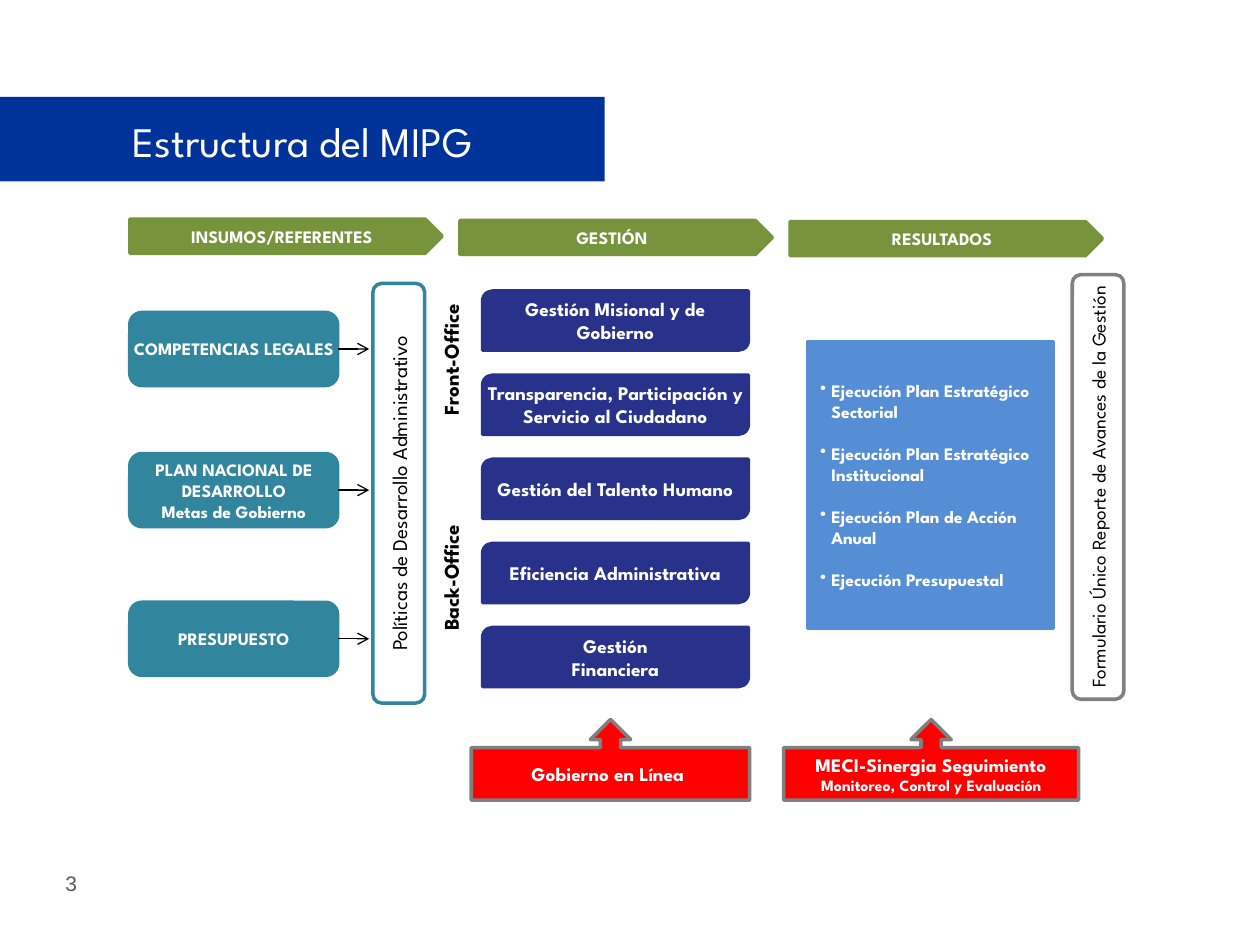
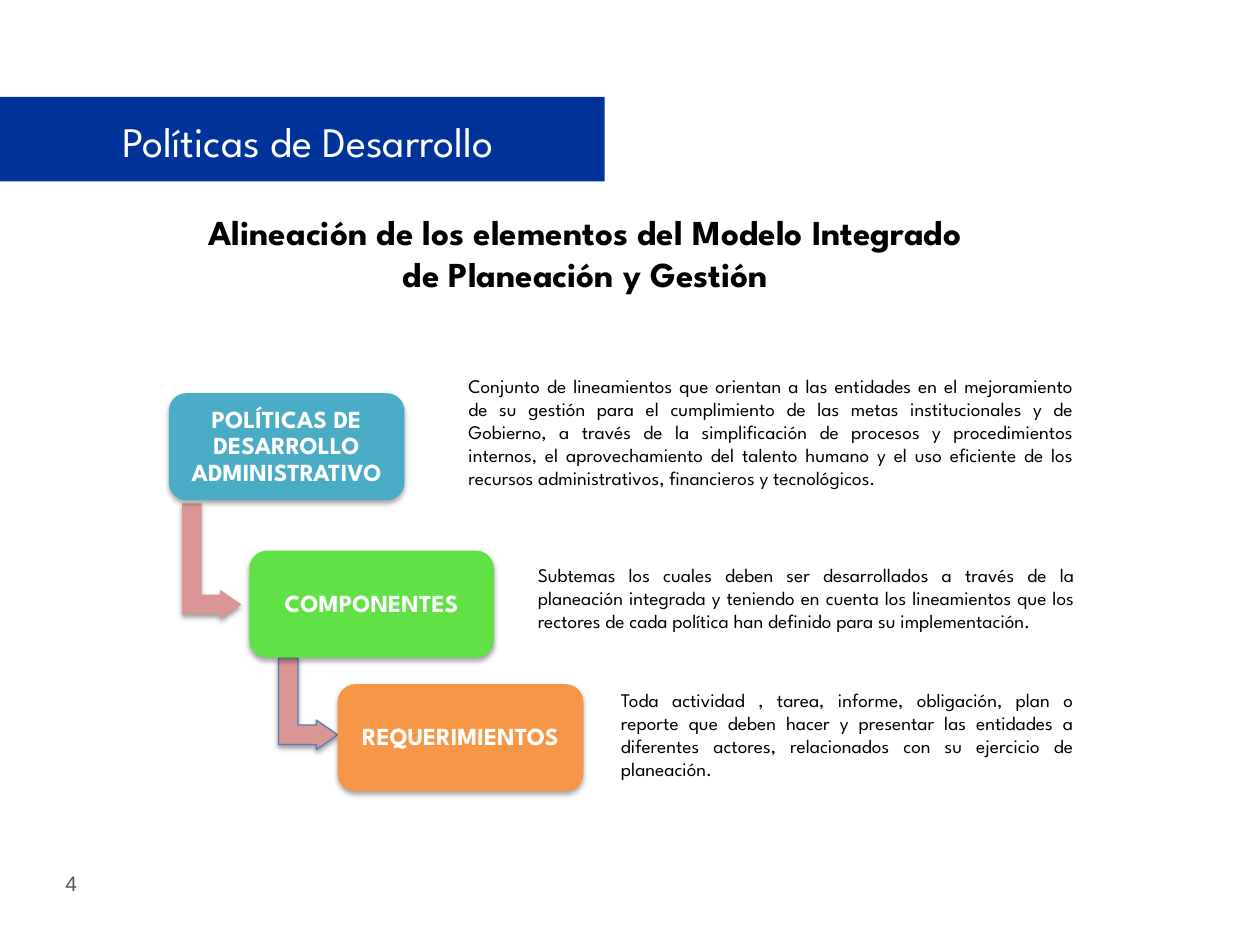
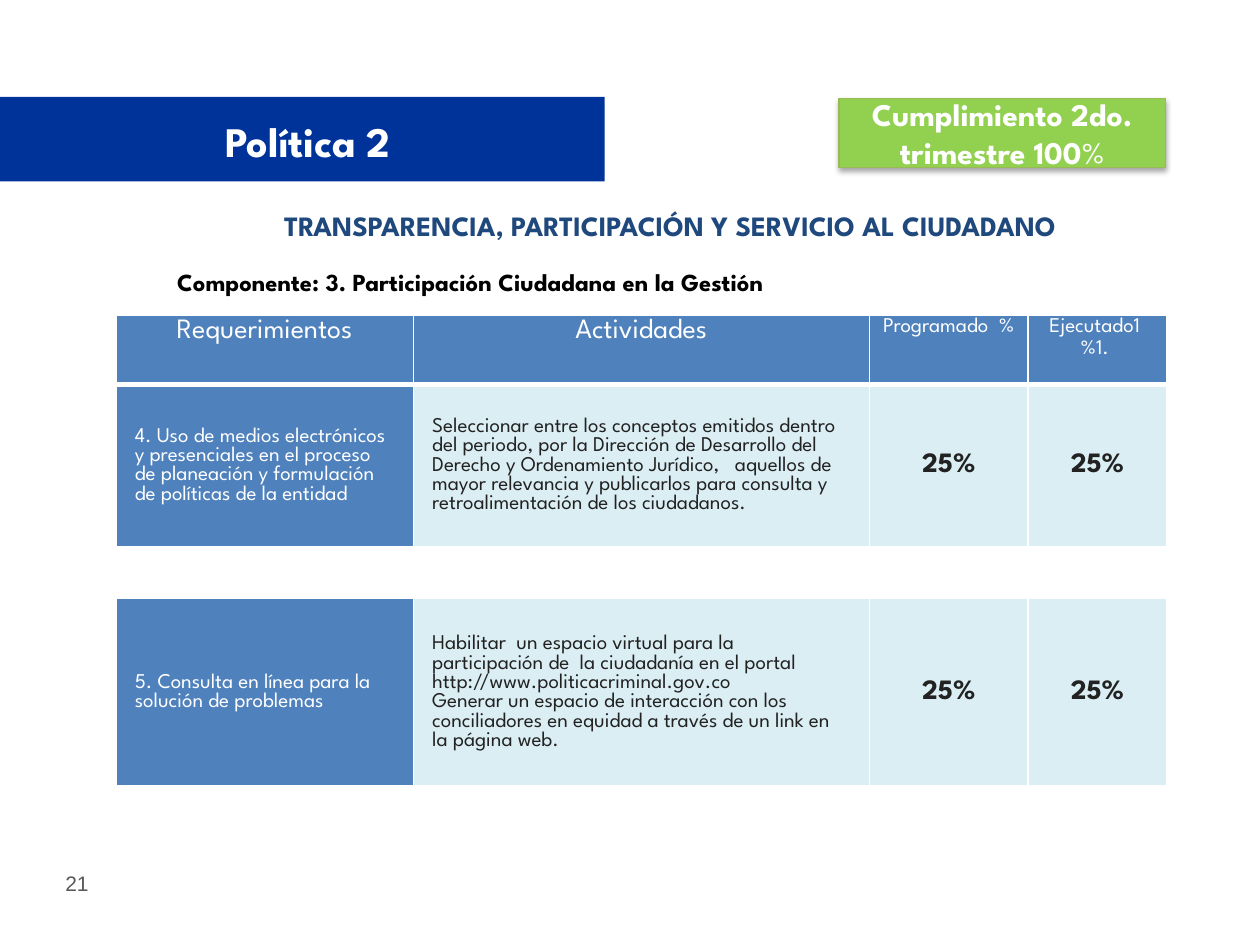
from lxml import etree
from pptx import Presentation
from pptx.dml.color import RGBColor
from pptx.enum.shapes import MSO_CONNECTOR, MSO_SHAPE
from pptx.enum.text import MSO_ANCHOR, PP_ALIGN
from pptx.oxml.ns import qn
from pptx.util import Inches, Pt

LEFT, MID, JUST = PP_ALIGN.LEFT, PP_ALIGN.CENTER, PP_ALIGN.JUSTIFY
TOP, CENTER = MSO_ANCHOR.TOP, MSO_ANCHOR.MIDDLE
RECT, ROUND = MSO_SHAPE.RECTANGLE, MSO_SHAPE.ROUNDED_RECTANGLE
PLATE, DIAG = MSO_SHAPE.PENTAGON, MSO_SHAPE.ROUND_2_DIAG_RECTANGLE
CALL, BENT = MSO_SHAPE.UP_ARROW_CALLOUT, MSO_SHAPE.BENT_UP_ARROW
STRAIGHT = MSO_CONNECTOR.STRAIGHT

FONT = "League Spartan"
WHITE, BLACK, INK, GRAY = "FFFFFF", "000000", "222222", "808080"
BAND, TEAL, NAVY, GREEN = "003399", "31859C", "28328A", "77933C"
RED, SKY, BLUE, PALE = "FF0000", "558ED5", "4F81BD", "DBEEF4"
COLS = [2.36, 3.62, 1.26, 1.1]


def color(code):
    return RGBColor.from_string(code)


def node(parent, tag, **attrs):
    item = etree.SubElement(parent, qn(tag))
    for key, value in attrs.items():
        item.set(key, str(value))
    return item


def paint(parent, code):
    return node(node(parent, "a:solidFill"), "a:srgbClr", val=code)


class Deck:
    def __init__(self):
        self.prs = Presentation()
        self.prs.slide_width, self.prs.slide_height = Inches(10), Inches(7.5)
        self.slide = None

    def page(self, title, number, bold=False):
        """Start a slide with its number, title band and title."""
        self.slide = self.prs.slides.add_slide(self.prs.slide_layouts[6])
        self.text(0.42, 6.86, 0.75, 0.3, number, 12, "595959", font="Arial")
        self.shape(RECT, 0, 0.77, 4.8, 0.67, BAND)
        self.text(0.34, 0.87, 4.21, 0.48, title, 24, WHITE, bold, MID)

    def typeset(self, frame, text, size, ink=BLACK, bold=False, align=LEFT,
                anchor=TOP, inset=None, space=None, gap=None, bullet=False,
                turn=False, font=FONT):
        frame.word_wrap = True
        frame.vertical_anchor = anchor
        if inset is not None:
            frame.margin_left = frame.margin_right = Inches(inset)
            frame.margin_top = frame.margin_bottom = Inches(inset)
        if turn:
            frame._txBody.bodyPr.set("vert", "vert270")
        for i, line in enumerate(text.split("\n")):
            para = frame.add_paragraph() if i else frame.paragraphs[0]
            para.add_run().text = line
            para.alignment = align
            if space:
                para.line_spacing = space
            if gap and i:
                para.space_before = Pt(gap)
            if bullet:
                props = para._p.get_or_add_pPr()
                props.set("marL", str(Inches(0.09)))
                props.set("indent", str(Inches(-0.09)))
                node(props, "a:buChar", char="•")
            para.font.name, para.font.size = font, Pt(size)
            para.font.bold = bold
            para.font.color.rgb = color(ink)

    def text(self, x, y, w, h, text, size, ink=BLACK, bold=False,
             align=LEFT, **style):
        box = self.slide.shapes.add_textbox(
            Inches(x), Inches(y), Inches(w), Inches(h))
        self.typeset(box.text_frame, text, size, ink, bold, align, **style)
        return box

    def shape(self, kind, x, y, w, h, fill=None, line=None, width=2):
        item = self.slide.shapes.add_shape(
            kind, Inches(x), Inches(y), Inches(w), Inches(h))
        item.shadow.inherit = False
        if fill:
            item.fill.solid()
            item.fill.fore_color.rgb = color(fill)
        else:
            item.fill.background()
        if line:
            item.line.color.rgb = color(line)
            item.line.width = Pt(width)
        else:
            item.line.fill.background()
        return item

    def label(self, item, text, size, ink=WHITE, bold=True, align=MID, **style):
        self.typeset(item.text_frame, text, size, ink, bold, align, CENTER,
                     **style)

    def shade(self, item, alpha, dist):
        """Cast a soft shadow straight down."""
        effects = item._element.spPr.find(qn("a:effectLst"))
        shadow = node(effects, "a:outerShdw", blurRad=Pt(3.1), dist=Pt(dist),
                      dir=5400000, rotWithShape=0)
        tone = node(shadow, "a:srgbClr", val=BLACK)
        node(tone, "a:alpha", val=alpha * 1000)

    def arrow(self, source, x, y):
        """Run an arrow from the right side of a shape."""
        link = self.slide.shapes.add_connector(
            STRAIGHT, Inches(x), Inches(y), Inches(x), Inches(y))
        link.begin_connect(source, 3)
        link.end_x, link.end_y = Inches(x), link.begin_y
        link.line.color.rgb = color(BLACK)
        link.line.width = Pt(0.75)
        node(link.line._get_or_add_ln(), "a:tailEnd", type="arrow")
        node(link._element.spPr, "a:effectLst")

    def elbow(self, x, y, w, h, line=None):
        item = self.shape(BENT, x, y, w, h, "D99694", line, 0.75)
        item.rotation = 90
        for i, value in enumerate((0.33, 0.25, 0.36)):
            item.adjustments[i] = value
        self.shade(item, 38, 1.6)

    def table(self, x, y, heights):
        grid = self.slide.shapes.add_table(
            len(heights), len(COLS), Inches(x), Inches(y),
            Inches(sum(COLS)), Inches(sum(heights))).table
        grid.first_row = grid.horz_banding = False
        for col, width in zip(grid.columns, COLS):
            col.width = Inches(width)
        for row, height in zip(grid.rows, heights):
            row.height = Inches(height)
        return grid

    def cell(self, grid, r, c, text, size, fill, ink, **style):
        cell = grid.cell(r, c)
        props = cell._tc.get_or_add_tcPr()
        for side, width in (("L", 1), ("R", 1), ("T", 3 if r else 1), ("B", 3)):
            paint(node(props, "a:ln" + side, w=Pt(width)), WHITE)
        cell.fill.solid()
        cell.fill.fore_color.rgb = color(fill)
        self.typeset(cell.text_frame, text, size, ink, **style)
        return cell

    def pad(self, cell, side, edge):
        cell.margin_left = cell.margin_right = Inches(side)
        cell.margin_top = cell.margin_bottom = Inches(edge)

    def heads(self, grid, names):
        for c, name in enumerate(names):
            cell = self.cell(grid, 0, c, name, 16 if c < 2 else 12, BLUE, WHITE,
                             align=MID, space=1.15)
            self.pad(cell, 0.07, 0)

    def goal(self, grid, r, need, task, plan, done):
        """Fill one body row: requirement, activity and two shares."""
        for c, (words, fill, ink) in enumerate(
                ((need, BLUE, WHITE), (task, PALE, INK))):
            cell = self.cell(grid, r, c, words, 12, fill, ink)
            self.pad(cell, 0.15, 0.15)
            cell.vertical_anchor = CENTER
        for c, share in enumerate((plan, done), 2):
            cell = self.cell(grid, r, c, share, 16, PALE, INK, bold=True,
                             align=MID)
            self.pad(cell, 0, 0)
            cell.vertical_anchor = CENTER


def model(deck):
    deck.page("Estructura del MIPG ", "3")

    # Stage headings
    for i, name in enumerate(("INSUMOS/REFERENTES", "GESTIÓN", "RESULTADOS")):
        plate = deck.shape(PLATE, 1.03 + 2.62 * i, 1.74 + 0.01 * i, 2.48, 0.27,
                           GREEN, GREEN)
        deck.label(plate, name, 10)

    # Inputs and their arrows
    inputs = ((2.48, "COMPETENCIAS LEGALES"),
              (3.6, "PLAN NACIONAL DE DESARROLLO\nMetas de Gobierno"),
              (4.78, "PRESUPUESTO"))
    for y, name in inputs:
        box = deck.shape(ROUND, 1.03, y, 1.65, 0.58, TEAL, TEAL)
        deck.label(box, name, 10, inset=0)
        deck.arrow(box, 2.93, y + 0.29)

    # Upright labels
    uprights = (
        (2.96, 2.25, 3.33, TEAL, "Políticas de Desarrollo Administrativo", 12),
        (3.37, 2.25, 1.21, None, "Front-Office", 12),
        (3.37, 3.98, 1.21, None, "Back-Office", 12),
        (8.51, 2.18, 3.37, GRAY,
         "Formulario Único Reporte de Avances de la Gestión", 11))
    for x, y, h, line, name, size in uprights:
        box = deck.shape(ROUND, x, y, 0.41, h, line=line)
        deck.label(box, name, size, BLACK, line is None, inset=0.04, turn=True)

    # Management policies
    areas = ("Gestión Misional y de Gobierno",
             "Transparencia, Participación y Servicio al Ciudadano",
             "Gestión del Talento Humano", "Eficiencia Administrativa",
             "Gestión\nFinanciera")
    for i, name in enumerate(areas):
        box = deck.shape(DIAG, 3.83, 2.31 + 2.67 * i / 4, 2.11, 0.47, NAVY, NAVY)
        deck.label(box, name, 11, inset=0)

    # Results
    box = deck.shape(RECT, 6.41, 2.71, 1.95, 2.28, SKY, SKY)
    deck.label(box, "Ejecución Plan Estratégico Sectorial\n"
               "Ejecución Plan Estratégico Institucional\n"
               "Ejecución Plan de Acción Anual\n"
               "Ejecución Presupuestal", 10, align=LEFT, gap=12, bullet=True)

    # Supporting callouts
    calls = ((3.74, 2.21, "Gobierno en Línea "),
             (6.22, 2.34, "MECI-Sinergia Seguimiento\n"
                          "Monitoreo, Control y Evaluación"))
    for x, w, name in calls:
        box = deck.shape(CALL, x, 5.71, w, 0.64, RED, GRAY)
        deck.label(box, name, 11, inset=0)
        for para in box.text_frame.paragraphs[1:]:
            para.font.size = Pt(9)


def levels(deck):
    deck.page("Políticas de Desarrollo", "4")
    deck.text(1.42, 1.62, 6.45, 0.77, "Alineación de los elementos del Modelo "
              "Integrado de Planeación y Gestión", 20, bold=True, align=MID)

    # Elbow arrows
    deck.elbow(1.22, 4.22, 0.92, 0.47)
    deck.elbow(2.08, 5.35, 0.73, 0.47, BLUE)

    # Steps
    steps = ((1.34, 3.12, 1.87, "4BACC6", "POLÍTICAS DE DESARROLLO ADMINISTRATIVO"),
             (1.98, 4.37, 1.94, "60E146", "COMPONENTES"),
             (2.68, 5.43, 1.95, "F79646", "REQUERIMIENTOS"))
    for x, y, w, fill, name in steps:
        card = deck.shape(ROUND, x, y, w, 0.85, fill)
        deck.shade(card, 35, 1.8)
        deck.label(card, name, 14, inset=0.06, space=0.9)

    # Definitions
    notes = (
        (3.62, 2.92, 5, 1.21,
         "Conjunto de lineamientos que orientan a las entidades en el "
         "mejoramiento de su gestión para el cumplimiento de las metas "
         "institucionales y de Gobierno, a través de la simplificación de "
         "procesos y procedimientos internos, el aprovechamiento del talento "
         "humano y el uso eficiente de los recursos administrativos, "
         "financieros y tecnológicos."),
        (4.17, 4.42, 4.46, 0.84,
         "Subtemas los cuales deben ser desarrollados a través de la "
         "planeación integrada y teniendo en cuenta los lineamientos que los "
         "rectores de cada política han definido para su implementación."),
        (4.83, 5.41, 3.79, 0.84,
         "Toda actividad , tarea, informe, obligación, plan o reporte que "
         "deben hacer y presentar las entidades a diferentes actores, "
         "relacionados con su ejercicio de planeación."))
    for x, y, w, h, note in notes:
        deck.text(x, y, w, h, note, 11, align=JUST)


def policy(deck):
    deck.page("Política 2", "21", bold=True)

    # Headings
    deck.text(0.46, 2.07, 6.55, 0.34,
              "Componente: 3. Participación Ciudadana en la Gestión", 14,
              bold=True, align=MID)
    deck.text(1.64, 1.61, 7.36, 0.37,
              "TRANSPARENCIA, PARTICIPACIÓN Y SERVICIO AL CIUDADANO", 16,
              "1F497D", True, MID)

    # Requirements
    grid = deck.table(0.92, 2.5, [0.55, 1.3])
    deck.heads(grid, ("Requerimientos", "Actividades", "Programado  %",
                      "Ejecutado1  %1. "))
    deck.goal(grid, 1, "4. Uso de medios electrónicos y presenciales en el "
              "proceso de planeación y formulación de políticas de la entidad",
              "Seleccionar entre los conceptos emitidos dentro del periodo, por "
              "la Dirección de Desarrollo del Derecho y Ordenamiento Jurídico,   "
              "aquellos de mayor relevancia y publicarlos para consulta y "
              "retroalimentación de los ciudadanos.", "25%", "25%")
    grid = deck.table(0.92, 4.75, [1.48])
    deck.goal(grid, 0, "5. Consulta en línea para la solución de problemas",
              "Habilitar  un espacio virtual para la participación de  la "
              "ciudadanía en el portal http://www.politicacriminal.gov.co\n"
              "Generar un espacio de interacción con los conciliadores en "
              "equidad a través de un link en la página web.", "25%", "25%")

    # Quarter result
    badge = deck.shape(RECT, 6.66, 0.78, 2.59, 0.55, "92D050", "98B955", 0.75)
    deck.shade(badge, 35, 1.8)
    deck.label(badge, "Cumplimiento 2do. trimestre 100", 18)
    sign = badge.text_frame.paragraphs[0].add_run()
    sign.text = "%"
    sign.font.bold = False


def main():
    deck = Deck()
    model(deck)
    levels(deck)
    policy(deck)
    deck.prs.save("out.pptx")


if __name__ == "__main__":
    main()
